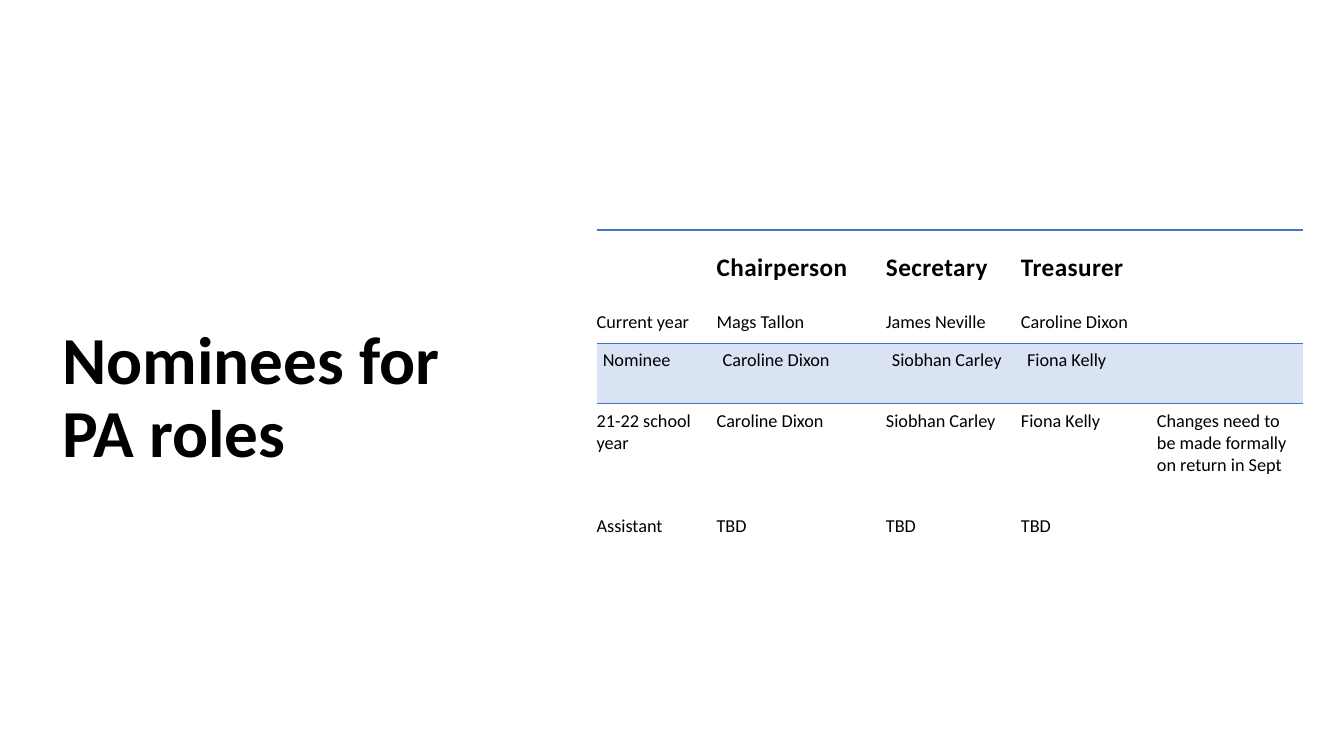
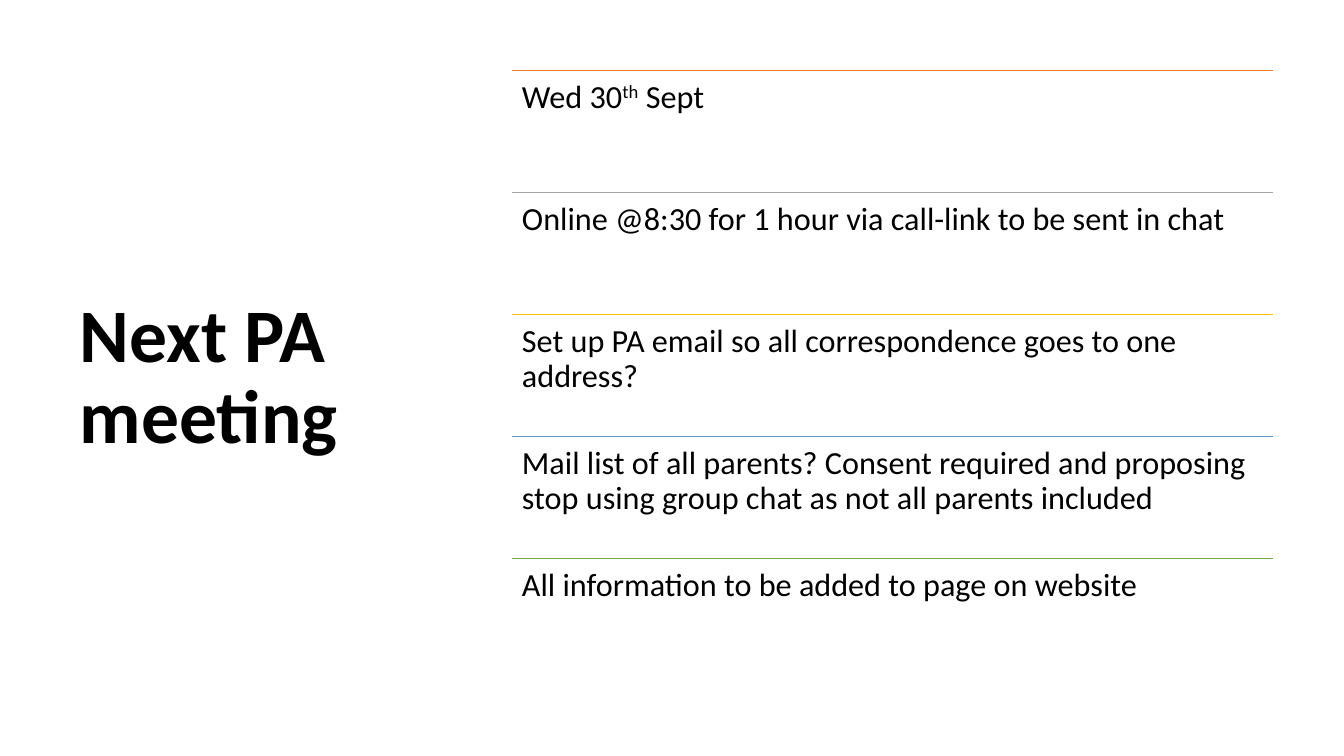
from lxml import etree
from pptx import Presentation, util as u
from pptx.dml.color import RGBColor
from pptx.enum import shapes, text
from pptx.oxml.ns import qn

FONT = "Calibri"
BLACK, BLUE, PALE_BLUE = "000000", "4472C4", "DAE3F3"
ORANGE, GREY, GOLD, SKY, GREEN = "ED7D31", "A5A5A5", "FFC000", "5B9BD5", "70AD47"
NO_STYLE = "{2D5ABB26-0587-4C30-8999-92F81FD0307C}"

# The slide is a grid of 100 columns by 100 rows.
SLIDE_WIDTH, SLIDE_HEIGHT = u.Inches(13.33), u.Inches(7.5)

ROLES_TITLE_BOX = (3.9, 16.4, 33, 46.67)
ROLES_TABLE_AT = (44.4, 30.4)
ROLE_COLUMNS = [8.92, 12.6, 10.05, 10.12, 10.88]
ROLE_ROWS = [10, 5, 8, 14, 14]
ROLES = [
    ["", "Chairperson", "Secretary", "Treasurer", ""],
    ["Current year", "Mags Tallon", "James Neville", "Caroline Dixon", ""],
    ["Nominee", "Caroline Dixon", "Siobhan Carley", "Fiona Kelly", ""],
    ["21-22 school year", "Caroline Dixon", "Siobhan Carley", "Fiona Kelly",
     "Changes need to be made formally on return in Sept"],
    ["Assistant", "TBD", "TBD", "TBD", ""],
]
HEADER_ROW, CURRENT_ROW, NOMINEE_ROW = 0, 1, 2
ROW_BORDERS = {HEADER_ROW: ("a:lnT", 1.5), CURRENT_ROW: ("a:lnB", 0.75),
               NOMINEE_ROW: ("a:lnT", 0.75)}

MEETING_TITLE_BOX = (5.2, 9.3, 28.05, 81.5)
AGENDA_BOX = (38.1, 9.3, 56.63, 80.7)
AGENDA = [
    (ORANGE, [("Wed 30", False), ("th", True), (" Sept", False)]),
    (GREY, [("Online @8:30 for 1 hour via call-link to be sent in chat", False)]),
    (GOLD, [("Set up PA email so all correspondence goes to one address?", False)]),
    (SKY, [("Mail list of all parents? Consent required and proposing "
            "stop using group chat as not all parents included", False)]),
    (GREEN, [("All information to be added to page on website", False)]),
]


def color(value):
    return RGBColor.from_string(value)


def across(columns):
    return u.Emu(round(SLIDE_WIDTH * columns / 100))


def down(rows):
    return u.Emu(round(SLIDE_HEIGHT * rows / 100))


def place(box):
    left, top, width, height = box
    return across(left), down(top), across(width), down(height)


def add_run(paragraph, content, size, bold=False, **attributes):
    """Extra attributes, such as baseline or spc, go on the run properties."""
    run = paragraph.add_run()
    run.text = content
    run.font.name, run.font.size, run.font.bold = FONT, u.Pt(size), bold
    run.font.color.rgb = color(BLACK)
    for name, value in attributes.items():
        run._r.get_or_add_rPr().set(name, str(value))


def add_text_box(parent, box, anchor):
    """Add a wrapping text box and return its frame and first paragraph."""
    frame = parent.shapes.add_textbox(*place(box)).text_frame
    frame.word_wrap = True
    frame.vertical_anchor = anchor
    paragraph = frame.paragraphs[0]
    paragraph.line_spacing = 0.9
    return frame, paragraph


def add_title(slide, box, title, size, anchor):
    _, paragraph = add_text_box(slide, box, anchor)
    add_run(paragraph, title, size, bold=True)


def add_rule(parent, left, top, width, line_color):
    start, level = across(left), down(top)
    rule = parent.shapes.add_connector(
        shapes.MSO_CONNECTOR.STRAIGHT, start, level, start + across(width), level)
    rule.line.color.rgb = color(line_color)
    rule.line.width = u.Pt(1)
    etree.SubElement(rule._element.spPr, qn("a:effectLst"))


def add_border(cell, side, width):
    line = etree.Element(qn(side), w=str(u.Pt(width)))
    fill = etree.SubElement(line, qn("a:solidFill"))
    etree.SubElement(fill, qn("a:srgbClr"), val=BLUE)
    cell._tc.get_or_add_tcPr().insert(0, line)


def fill_cell(cell, content, row):
    is_header, is_nominee = row == HEADER_ROW, row == NOMINEE_ROW
    if is_nominee:
        cell.fill.solid()
        cell.fill.fore_color.rgb = color(PALE_BLUE)
    else:
        cell.fill.background()
    if row in ROW_BORDERS:
        add_border(cell, *ROW_BORDERS[row])
    cell.margin_left = u.Inches(0.06 if is_nominee else 0)
    cell.margin_right = u.Inches(0.01 if is_header else 0.11)
    cell.margin_top = cell.margin_bottom = u.Inches(0.06 if content else 0)
    if not content:
        return
    paragraph = cell.text_frame.paragraphs[0]
    if is_header:
        cell.vertical_anchor = text.MSO_ANCHOR.MIDDLE
        add_run(paragraph, content, 18, bold=True, spc=30)
    else:
        add_run(paragraph, content, 13)


def add_roles_table(slide, left, top):
    box = (left, top, sum(ROLE_COLUMNS), sum(ROLE_ROWS))
    table = slide.shapes.add_table(
        len(ROLE_ROWS), len(ROLE_COLUMNS), *place(box)).table
    table.first_row = table.horz_banding = False
    table._tbl.tblPr.find(qn("a:tableStyleId")).text = NO_STYLE
    for column, width in zip(table.columns, ROLE_COLUMNS):
        column.width = across(width)
    for row, height in zip(table.rows, ROLE_ROWS):
        row.height = down(height)
    for row, contents in enumerate(ROLES):
        for column, content in enumerate(contents):
            fill_cell(table.cell(row, column), content, row)


def add_agenda(slide, box):
    """Stack equal rows, each under a coloured rule."""
    left, top, width, height = box
    row_height = height / len(AGENDA)
    group = slide.shapes.add_group_shape()
    for index, (line_color, runs) in enumerate(AGENDA):
        row_top = top + index * row_height
        add_rule(group, left, row_top, width, line_color)
        frame, paragraph = add_text_box(
            group, (left, row_top, width, row_height), text.MSO_ANCHOR.TOP)
        frame.margin_top = frame.margin_bottom = u.Inches(0.1)
        for content, raised in runs:
            attributes = {"baseline": 30000} if raised else {}
            add_run(paragraph, content, 23, **attributes)


def add_roles_slide(slide):
    add_title(slide, ROLES_TITLE_BOX, "Nominees for PA roles", 48,
              text.MSO_ANCHOR.BOTTOM)
    add_roles_table(slide, *ROLES_TABLE_AT)


def add_meeting_slide(slide):
    add_title(slide, MEETING_TITLE_BOX, "Next PA meeting", 54,
              text.MSO_ANCHOR.MIDDLE)
    add_agenda(slide, AGENDA_BOX)


def main():
    presentation = Presentation()
    presentation.slide_width = SLIDE_WIDTH
    presentation.slide_height = SLIDE_HEIGHT
    blank = presentation.slide_layouts[6]
    for build in (add_roles_slide, add_meeting_slide):
        build(presentation.slides.add_slide(blank))
    presentation.save("out.pptx")


if __name__ == "__main__":
    main()
